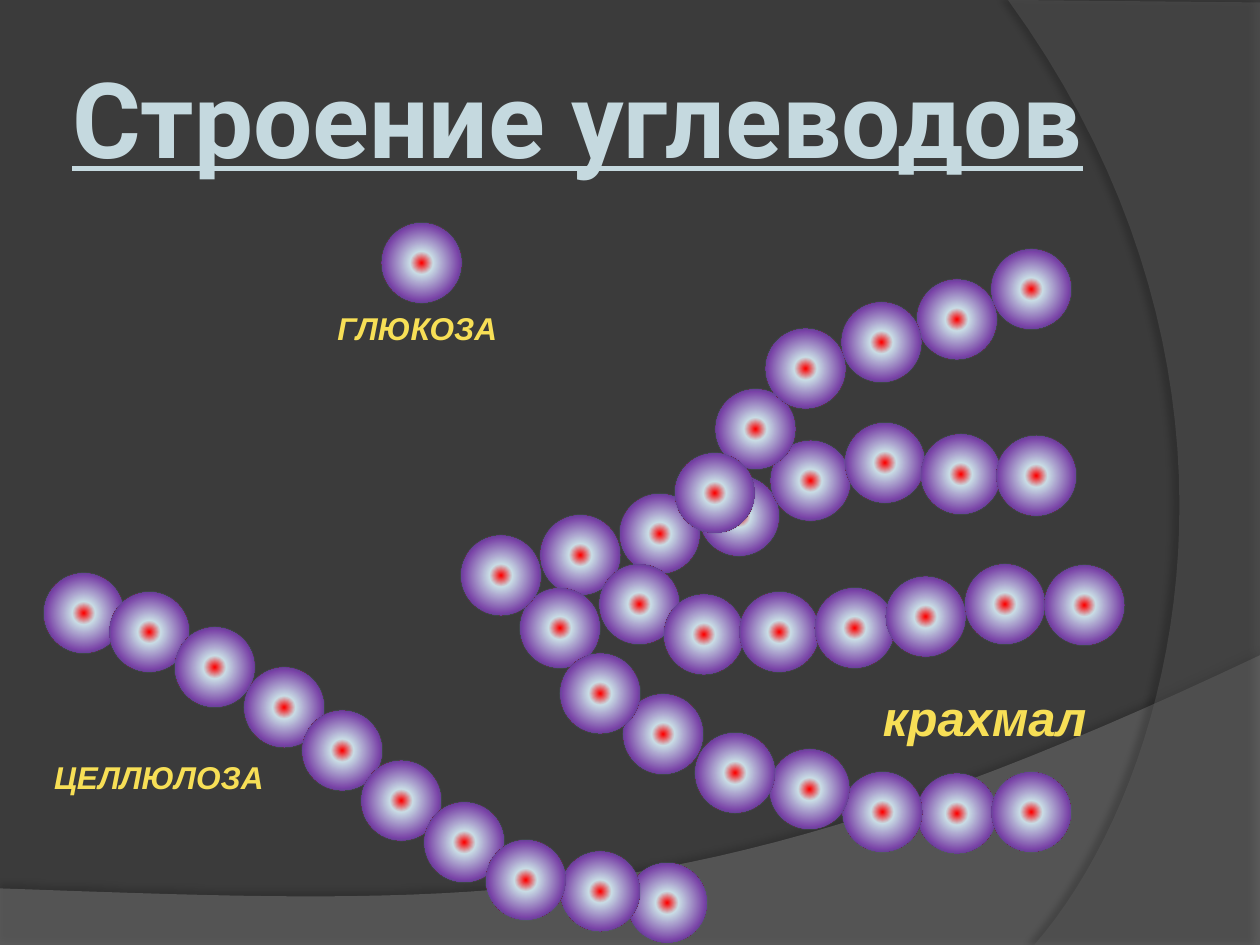
import pptx
import pptx.dml.color
import pptx.enum.shapes
import pptx.enum.text
import pptx.oxml
import pptx.oxml.ns
import pptx.util
from pptx.dml.color import RGBColor
from pptx.util import Cm

BACKGROUND = RGBColor(0x3B, 0x3B, 0x3B)
WAVE = RGBColor(0x7F, 0x7F, 0x7F)
SIDE = RGBColor(0x5E, 0x5E, 0x5E)
TITLE = RGBColor(0xC5, 0xD9, 0xDF)
LABEL = RGBColor(0xF7, 0xDF, 0x56)
RIM = RGBColor(0x51, 0x76, 0x82)
SHADOW = RGBColor(0, 0, 0)
UNIT_GRADIENT = (
    (0, RGBColor(0xFF, 0, 0)),
    (20, RGBColor(0xCA, 0xDE, 0xE6)),
    (73, RGBColor(0x70, 0x30, 0xA0)),
    (88, RGBColor(0xC0, 0, 0)),
    (100, RGBColor(0xE5, 0xEE, 0xF2)),
)
UNIT_SIZE = 1.6

# Offsets of the glucose units in cm, each chain from back to front
STARCH_BRANCHES = (
    ((1.6, 5.36), (3.2, 4.93), (4.8, 4.57), (6.24, 3.86), (7.74, 3.5),
     (9.27, 3.73), (10.79, 3.76)),
    ((2.79, 6.35), (4.09, 6.96), (5.61, 6.91), (7.13, 6.83), (8.56, 6.6),
     (10.16, 6.35), (11.76, 6.37)),
    ((1.19, 6.83), (0, 5.77), (9.19, 10.57), (7.69, 10.54), (6.22, 10.08),
     (4.72, 9.75), (3.27, 8.97), (2, 8.15), (10.69, 10.54)),
    ((5.13, 2.82), (9.19, 0.61), (7.67, 1.07), (6.14, 1.6), (4.31, 4.11),
     (10.69, 0)),
)
CELLULOSE_CHAIN = (
    (0, 0), (1.32, 0.38), (2.64, 1.09), (4.04, 1.9), (5.21, 2.77),
    (6.4, 3.78), (7.67, 4.62), (11.76, 5.84), (10.41, 5.61), (8.91, 5.38),
)


def drawing_xml(content):
    """Parse one DrawingML element given without its namespace declaration."""
    tag, rest = content.split(" ", 1)
    return pptx.oxml.parse_xml(f'{tag} {pptx.oxml.ns.nsdecls("a")} {rest}')


def set_opacity(container, percent):
    color = container.find(".//" + pptx.oxml.ns.qn("a:srgbClr"))
    color.append(drawing_xml(f'<a:alpha val="{percent * 1000}"/>'))


def add_text(slide, text, left, top, width, height, *, size, font, color,
             italic=False, underline=False, centered=False, inset=None):
    box = slide.shapes.add_textbox(Cm(left), Cm(top), Cm(width), Cm(height))
    frame = box.text_frame
    frame.word_wrap = True
    if inset is not None:
        frame.margin_left = frame.margin_right = Cm(inset)
        frame.margin_top = frame.margin_bottom = Cm(inset)
    paragraph = frame.paragraphs[0]
    if centered:
        frame.vertical_anchor = pptx.enum.text.MSO_ANCHOR.MIDDLE
        paragraph.alignment = pptx.enum.text.PP_ALIGN.CENTER
    run = paragraph.add_run()
    run.text = text
    run.font.size = pptx.util.Pt(size)
    run.font.name = font
    run.font.color.rgb = color
    run.font.bold = True
    run.font.italic = italic
    run.font.underline = underline


def add_label(slide, text, left, top, width, height, size=18):
    add_text(slide, text, left, top, width, height, size=size, font="Arial",
             color=LABEL, italic=True)


def bezier_points(start, control1, control2, end, steps=40):
    for step in range(1, steps + 1):
        t = step / steps
        weights = ((1 - t) ** 3, 3 * t * (1 - t) ** 2, 3 * t * t * (1 - t), t ** 3)
        yield tuple(
            sum(weight * value for weight, value in zip(weights, values))
            for values in zip(start, control1, control2, end)
        )


def add_backdrop(slide, left, top, corners, curve, color, opacity,
                 shadow_opacity, shadow_distance, shadow_angle):
    """Draw a translucent panel whose last corner starts a cubic curve."""
    points = [*corners, *bezier_points(corners[-1], *curve)]
    points = [(Cm(left + x), Cm(top + y)) for x, y in points]
    builder = slide.shapes.build_freeform(*points[0])
    builder.add_line_segments(points[1:], close=True)
    shape = builder.convert_to_shape()
    shape.fill.solid()
    shape.fill.fore_color.rgb = color
    shape.line.fill.background()
    shape.shadow.inherit = False
    properties = shape._element.spPr
    set_opacity(properties, opacity)
    shadow = drawing_xml(
        f'<a:outerShdw blurRad="{pptx.util.Pt(4)}" dist="{pptx.util.Pt(shadow_distance)}"'
        f' dir="{shadow_angle * 60000}" algn="ctr" rotWithShape="0">'
        f'<a:srgbClr val="{SHADOW}"/></a:outerShdw>')
    set_opacity(shadow, shadow_opacity)
    properties.find(pptx.oxml.ns.qn("a:effectLst")).append(shadow)


def add_unit(slide, left, top):
    """Draw one glucose unit."""
    unit = slide.shapes.add_shape(
        pptx.enum.shapes.MSO_SHAPE.OVAL,
        Cm(left), Cm(top), Cm(UNIT_SIZE), Cm(UNIT_SIZE))
    unit.shadow.inherit = False
    unit.line.color.rgb = RIM
    unit.line.width = pptx.util.Pt(1.5)
    properties = unit._element.spPr
    set_opacity(properties, 19)
    stops = "".join(
        f'<a:gs pos="{position * 1000}"><a:srgbClr val="{color}"/></a:gs>'
        for position, color in UNIT_GRADIENT)
    gradient = drawing_xml(
        f'<a:gradFill rotWithShape="1"><a:gsLst>{stops}</a:gsLst><a:path path="circle">'
        '<a:fillToRect l="50000" t="50000" r="50000" b="50000"/></a:path></a:gradFill>')
    properties.find(pptx.oxml.ns.qn("a:prstGeom")).addnext(gradient)


def add_chain(slide, left, top, offsets):
    for x, y in offsets:
        add_unit(slide, left + x, top + y)


def add_glucose(slide, left, top):
    add_unit(slide, left + 1.15, top)
    add_label(slide, "ГЛЮКОЗА", left, top + 1.6, 4.04, 1.02)


def add_starch(slide, left, top):
    for branch in STARCH_BRANCHES:
        add_chain(slide, left, top, branch)
    add_label(slide, "крахмал", left + 8.25, top + 8.71, 5.1, 1.45, size=28)


def add_cellulose(slide, left, top):
    add_chain(slide, left, top, CELLULOSE_CHAIN)
    add_label(slide, "ЦЕЛЛЮЛОЗА", left - 0.05, top + 3.6, 4.9, 1.02)


def main():
    presentation = pptx.Presentation()
    presentation.slide_width = Cm(25.4)
    presentation.slide_height = Cm(19.05)
    slide = presentation.slides.add_slide(presentation.slide_layouts[6])
    slide.background.fill.solid()
    slide.background.fill.fore_color.rgb = BACKGROUND

    add_backdrop(slide, 0, 13.21,
                 ((0, 4.7), (0, 5.87), (25.4, 5.87), (25.4, 0)),
                 ((14.2, 5.31), (9.93, 5.05), (0, 4.7)),
                 WAVE, 45, 35, 3.5, 270)
    add_backdrop(slide, 20.32, 0,
                 ((5.08, 0.05), (5.08, 19.05), (0.53, 19.05)),
                 ((3.43, 15.72), (5.54, 7.62), (0, 0)),
                 SIDE, 40, 45, 4, 180)
    add_text(slide, "Строение углеводов", 1.27, 0.76, 20.75, 3.18, size=60,
             font="Roboto", color=TITLE, underline=True, centered=True, inset=0.13)
    add_starch(slide, 9.3, 5.03)
    add_glucose(slide, 6.55, 4.5)
    add_cellulose(slide, 0.89, 11.56)
    presentation.save("out.pptx")


if __name__ == "__main__":
    main()
